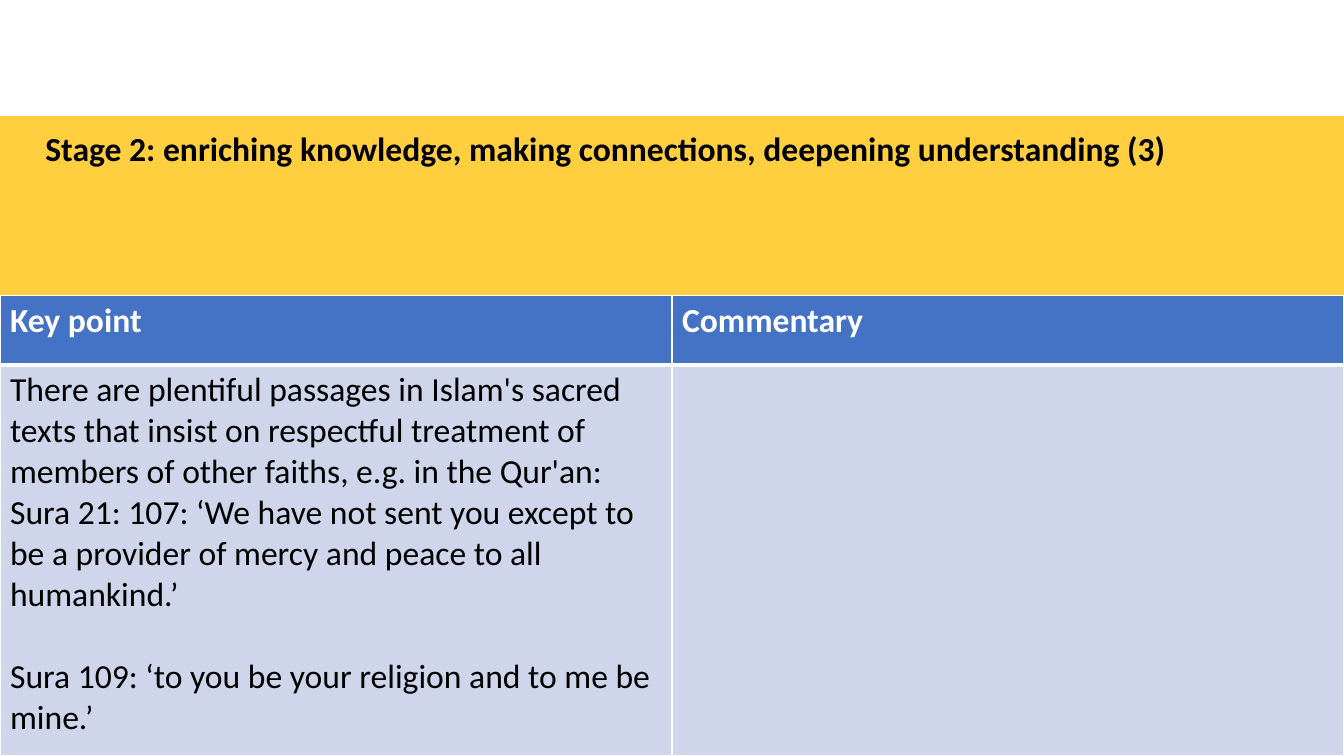
from lxml.etree import SubElement
from pptx import Presentation
from pptx.dml.color import RGBColor
from pptx.enum.shapes import MSO_SHAPE
from pptx.enum.text import MSO_ANCHOR, MSO_AUTO_SIZE, PP_ALIGN
from pptx.oxml.ns import qn
from pptx.util import Inches, Pt

WIDTH, HEIGHT = Inches(13.33), Inches(7.5)
BANNER_HEIGHT = Inches(1.15)
TABLE_TOP = Inches(2.93)
HEADER_HEIGHT = Inches(0.69)
TEXT_SIZE = 24
LINE_GAP = 29.3

GOLD, WHITE, BLACK = "FFCF40", "FFFFFF", "000000"
HEADER_BLUE, BODY_BLUE = "4472C4", "CFD5EA"

HEADINGS = ["Key point", "Commentary"]
KEY_POINT = [
    "There are plentiful passages in Islam's sacred texts that insist on "
    "respectful treatment of members of other faiths, e.g. in the Qur'an:\n"
    "Sura 21: 107: ‘We have not sent you except to be a provider of mercy "
    "and peace to all humankind.’",
    "Sura 109: ‘to you be your religion and to me be mine.’",
]


def paint(fill, color):
    fill.solid()
    fill.fore_color.rgb = RGBColor.from_string(color)


def write(frame, paragraphs, color=BLACK, bold=False, size=TEXT_SIZE, gap=0):
    """Fill a text frame with paragraphs, set apart by gap points."""
    for index, text in enumerate(paragraphs):
        para = frame.paragraphs[0] if index == 0 else frame.add_paragraph()
        para.text = text
        para.alignment = PP_ALIGN.LEFT
        para.space_before = Pt(gap if index else 0)
        for span in para.runs:
            span.font.name = "Calibri"
            span.font.size = Pt(size)
            span.font.bold = bold
            span.font.color.rgb = RGBColor.from_string(color)


def add_banner(page):
    banner = page.shapes.add_shape(MSO_SHAPE.RECTANGLE, 0, 0, WIDTH, BANNER_HEIGHT)
    banner.shadow.inherit = False
    paint(banner.fill, WHITE)
    banner.line.fill.background()


def place_title(page, text):
    title = page.shapes.title
    title.left, title.top = Inches(0.35), Inches(1.22)
    title.width, title.height = Inches(12.26), Inches(0.91)
    frame = title.text_frame
    frame.word_wrap = True
    frame.auto_size = MSO_AUTO_SIZE.NONE
    frame.vertical_anchor = MSO_ANCHOR.TOP
    write(frame, [text], bold=True)


def border(cell, **widths):
    """Draw white cell borders; widths in points by side: L, R, T, B."""
    properties = cell._tc.get_or_add_tcPr()
    for side, width in widths.items():
        line = SubElement(properties, qn(f"a:ln{side}"), w=str(Pt(width)))
        fill = SubElement(line, qn("a:solidFill"))
        SubElement(fill, qn("a:srgbClr"), val=WHITE)


def add_commentary_table(page):
    table = page.shapes.add_table(
        2, len(HEADINGS), 0, TABLE_TOP, WIDTH, HEIGHT - TABLE_TOP
    ).table
    table.rows[0].height = HEADER_HEIGHT
    table.rows[1].height = HEIGHT - TABLE_TOP - HEADER_HEIGHT
    for column, heading in enumerate(HEADINGS):
        header, body = table.cell(0, column), table.cell(1, column)
        border(header, L=1, R=1, T=1, B=3)
        border(body, L=1, R=1, T=3, B=1)
        paint(header.fill, HEADER_BLUE)
        paint(body.fill, BODY_BLUE)
        write(header.text_frame, [heading], color=WHITE, bold=True)
    write(table.cell(1, 0).text_frame, KEY_POINT, gap=LINE_GAP)


def main():
    deck = Presentation()
    deck.slide_width, deck.slide_height = WIDTH, HEIGHT
    page = deck.slides.add_slide(deck.slide_layouts[5])
    paint(page.background.fill, GOLD)
    add_banner(page)
    place_title(
        page,
        "Stage 2: enriching knowledge, making connections, "
        "deepening understanding (3)",
    )
    add_commentary_table(page)
    deck.save("out.pptx")


if __name__ == "__main__":
    main()
